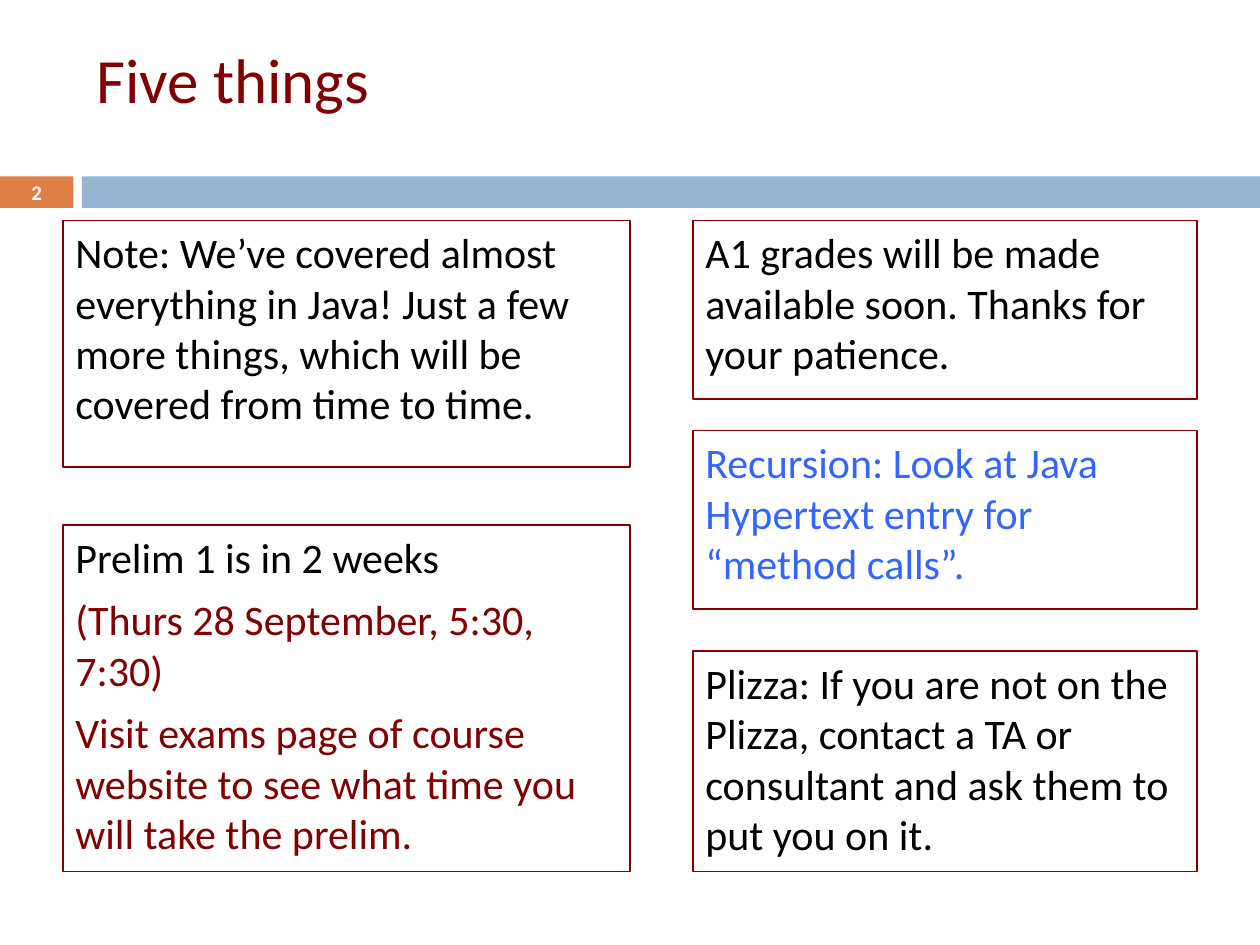
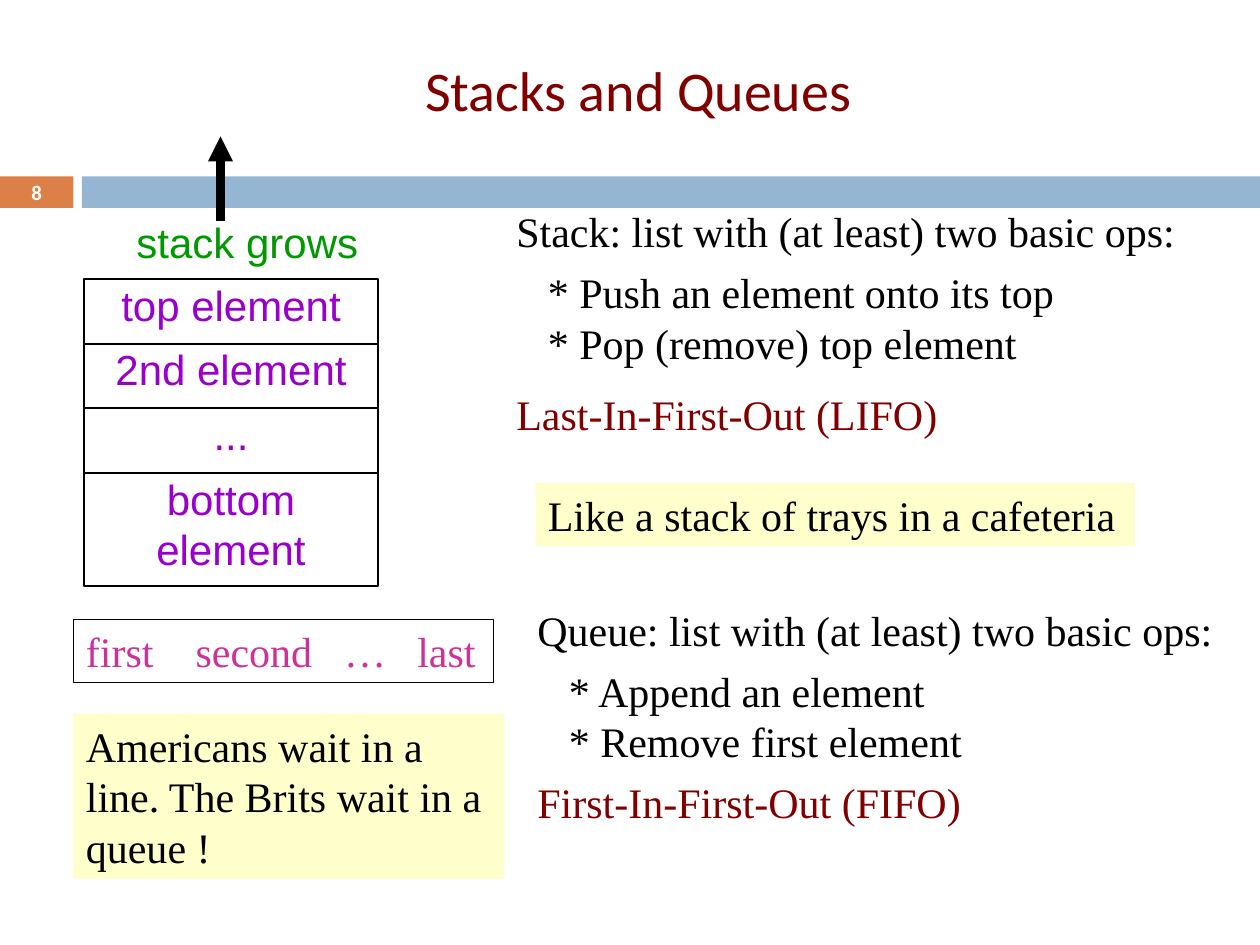
from dataclasses import dataclass

from lxml import etree
from pptx import Presentation
from pptx import util as u
from pptx.dml.color import RGBColor
from pptx.enum import shapes, text
from pptx.oxml import ns


@dataclass(frozen=True)
class Theme:
    """Colours, fonts and type sizes shared by the slides."""
    orange: str = "DD8047"
    blue: str = "94B6D2"
    maroon: str = "800000"
    white: str = "FFFFFF"
    black: str = "000000"
    link: str = "3366FF"
    purple: str = "9900CC"
    green: str = "009900"
    pink: str = "CC3399"
    cream: str = "FFFFCC"
    sans: str = "Calibri"
    serif: str = "Times New Roman"
    plain: str = "Arial"
    body: float = 24
    number: float = 11.9


THEME = Theme()
WIDTH, HEIGHT = u.Inches(10), u.Inches(7.5)
COLUMNS, ROWS = 120, 90
CELL = WIDTH // COLUMNS
INSETS = (0.1, 0.05, 0.1, 0.05)
MIDDLE, TOP = text.MSO_ANCHOR.MIDDLE, text.MSO_ANCHOR.TOP
CENTER, LEFT = text.PP_ALIGN.CENTER, text.PP_ALIGN.LEFT


@dataclass(frozen=True)
class Line:
    """One paragraph with its colour, space before and indent."""
    words: str
    color: str = THEME.black
    before: float = 0
    indent: float = 0


def grid(*cells):
    """Convert counts of grid cells to lengths."""
    return [u.Emu(round(cell * CELL)) for cell in cells]


def add_box(slide, area, fill=None, outline=None, weight=0.75):
    """Add a rectangle on the grid area (column, row, columns, rows)."""
    shape = slide.shapes.add_shape(shapes.MSO_SHAPE.RECTANGLE, *grid(*area))
    shape.shadow.inherit = False
    if fill:
        shape.fill.solid()
        shape.fill.fore_color.rgb = RGBColor.from_string(fill)
    else:
        shape.fill.background()
    if outline:
        shape.line.color.rgb = RGBColor.from_string(outline)
        shape.line.width = u.Pt(weight)
    else:
        shape.line.fill.background()
    return shape


def add_textbox(slide, area):
    """Add an empty text box on the grid area."""
    return slide.shapes.add_textbox(*grid(*area))


def write(shape, lines, font=THEME.sans, size=THEME.body, bold=False,
          align=LEFT, anchor=TOP, insets=INSETS):
    """Write the lines into a shape, one paragraph and run for each."""
    frame = shape.text_frame
    frame.word_wrap = True
    frame.vertical_anchor = anchor
    (frame.margin_left, frame.margin_top,
     frame.margin_right, frame.margin_bottom) = map(u.Inches, insets)
    for index, line in enumerate(lines):
        paragraph = frame.add_paragraph() if index else frame.paragraphs[0]
        paragraph.alignment = align
        paragraph.space_before = u.Pt(line.before)
        if line.indent:
            paragraph._p.get_or_add_pPr().set("marL", str(u.Inches(line.indent)))
        run = paragraph.add_run()
        run.text = line.words
        run.font.name = font
        run.font.size = u.Pt(size)
        run.font.bold = bold
        run.font.color.rgb = RGBColor.from_string(line.color)


def set_tabs(paragraph, stops):
    """Set left tab stops, in inches, on a paragraph."""
    tabs = etree.SubElement(paragraph._p.get_or_add_pPr(), ns.qn("a:tabLst"))
    for stop in stops:
        etree.SubElement(tabs, ns.qn("a:tab"), pos=str(u.Inches(stop)), algn="l")


def add_up_arrow(slide, column, bottom, top):
    """Add a thick vertical arrow pointing up."""
    arrow = slide.shapes.add_connector(
        shapes.MSO_CONNECTOR.STRAIGHT, *grid(column, bottom, column, top))
    arrow.line.color.rgb = RGBColor.from_string(THEME.black)
    arrow.line.width = u.Pt(4.75)
    etree.SubElement(arrow.line._get_or_add_ln(), ns.qn("a:tailEnd"), type="triangle")
    etree.SubElement(arrow._element.spPr, ns.qn("a:effectLst"))


def add_titled_slide(presentation, title, number, area, size, align=LEFT):
    """Add a slide with the shared bands, a title and a slide number."""
    slide = presentation.slides.add_slide(presentation.slide_layouts[6])
    add_box(slide, (0, 16.8, 7, 3), THEME.orange)
    add_box(slide, (7.8, 16.8, COLUMNS - 7.8, 3), THEME.blue)
    write(add_textbox(slide, area), [Line(title, THEME.maroon)],
          size=size, align=align, anchor=MIDDLE)
    write(add_textbox(slide, (0, 16.7, 7, 3.2)), [Line(number, THEME.white)],
          size=THEME.number, bold=True, align=CENTER, anchor=MIDDLE)
    return slide


def add_notice(slide, area, *lines):
    """Add a white notice with a maroon outline."""
    write(add_box(slide, area, THEME.white, THEME.maroon), lines)


def add_stack(slide, column, row, labels):
    """Add the stacked elements, the last one taller than the others."""
    step = 6.15
    for index, label in enumerate(labels):
        rows = 10.8 if index == len(labels) - 1 else step
        box = add_box(slide, (column, row + index * step, 28, rows),
                      outline=THEME.black, weight=1)
        write(box, [Line(label, THEME.purple, 14, 0.04)], THEME.plain,
              align=CENTER, insets=(0, 0, 0.04, 0))


def add_definition(slide, area, heading, operations, rule, gap):
    """Add a heading, its starred operations and the ordering rule."""
    starred = [Line("* " + operation, before=0 if index else 6, indent=0.25)
               for index, operation in enumerate(operations)]
    write(add_textbox(slide, area),
          [Line(heading), *starred, Line(rule, THEME.maroon, gap)], THEME.serif)


def add_remark(slide, area, words):
    """Add a remark on a cream background."""
    write(add_box(slide, area, THEME.cream), [Line(words)], THEME.serif)


def add_queue(slide, area, words, stops):
    """Add the outlined queue with its words on tab stops."""
    box = add_box(slide, area, outline=THEME.black)
    write(box, [Line("\t".join(words), THEME.pink)], THEME.serif)
    set_tabs(box.text_frame.paragraphs[0], stops)


def build_five_things(presentation):
    """Build the slide of course notices."""
    slide = add_titled_slide(presentation, "Five things", "2", (8, 3, 57, 9), 36)
    add_notice(slide, (6, 21, 54, 23.5), Line(
        "Note: We’ve covered almost everything in Java! Just a few more things, "
        "which will be covered from time to time.", before=7))
    add_notice(slide, (66, 41, 48, 17), Line(
        "Recursion: Look at Java Hypertext entry for “method calls”.",
        THEME.link, 7))
    add_notice(
        slide, (6, 50, 54, 33),
        Line("Prelim 1 is in 2 weeks", before=7),
        Line("(Thurs 28 September, 5:30, 7:30)", THEME.maroon, 7),
        Line("Visit exams page of course website to see what time you will "
             "take the prelim.", THEME.maroon, 7))
    add_notice(slide, (66, 21, 48, 17), Line(
        "A1 grades will be made available soon. Thanks for your patience.",
        before=7))
    add_notice(slide, (66, 62, 48, 21), Line(
        "Plizza: If you are not on the Plizza, contact a TA or consultant "
        "and ask them to put you on it.", before=7))


def build_stacks_and_queues(presentation):
    """Build the slide that compares stacks and queues."""
    slide = add_titled_slide(presentation, "Stacks and Queues", "8",
                             (6.5, 4, 108.6, 9), 32, CENTER)
    add_stack(slide, 8, 26.6,
              ["top element", "2nd element", "...", "bottom element"])
    write(add_textbox(slide, (13, 20.6, 24, 4.8)),
          [Line("stack grows", THEME.green, 4.1)], THEME.plain, insets=(0, 0, 0, 0))
    add_up_arrow(slide, 21, 21, 13)
    add_definition(slide, (48, 19, 72, 23.6),
                   "Stack: list with (at least) two basic ops:",
                   ["Push an element onto its top", "Pop (remove) top element"],
                   "Last-In-First-Out (LIFO)", 12)
    add_remark(slide, (51, 46, 57.1, 6), "Like a stack of trays in a cafeteria")
    add_queue(slide, (7, 59, 40, 6), ["first", "second", "…", "last"],
              [0.87, 2.05, 2.63])
    add_definition(slide, (50, 57, 68, 22.6),
                   "Queue: list with (at least) two basic ops:",
                   ["Append an element", "Remove first element"],
                   "First-In-First-Out (FIFO)", 6)
    add_remark(slide, (7, 68, 41, 15.7),
               "Americans wait in a line. The Brits wait in a queue !")


def main():
    """Build and save the presentation."""
    presentation = Presentation()
    presentation.slide_width, presentation.slide_height = WIDTH, HEIGHT
    build_five_things(presentation)
    build_stacks_and_queues(presentation)
    presentation.save("out.pptx")


if __name__ == "__main__":
    main()
